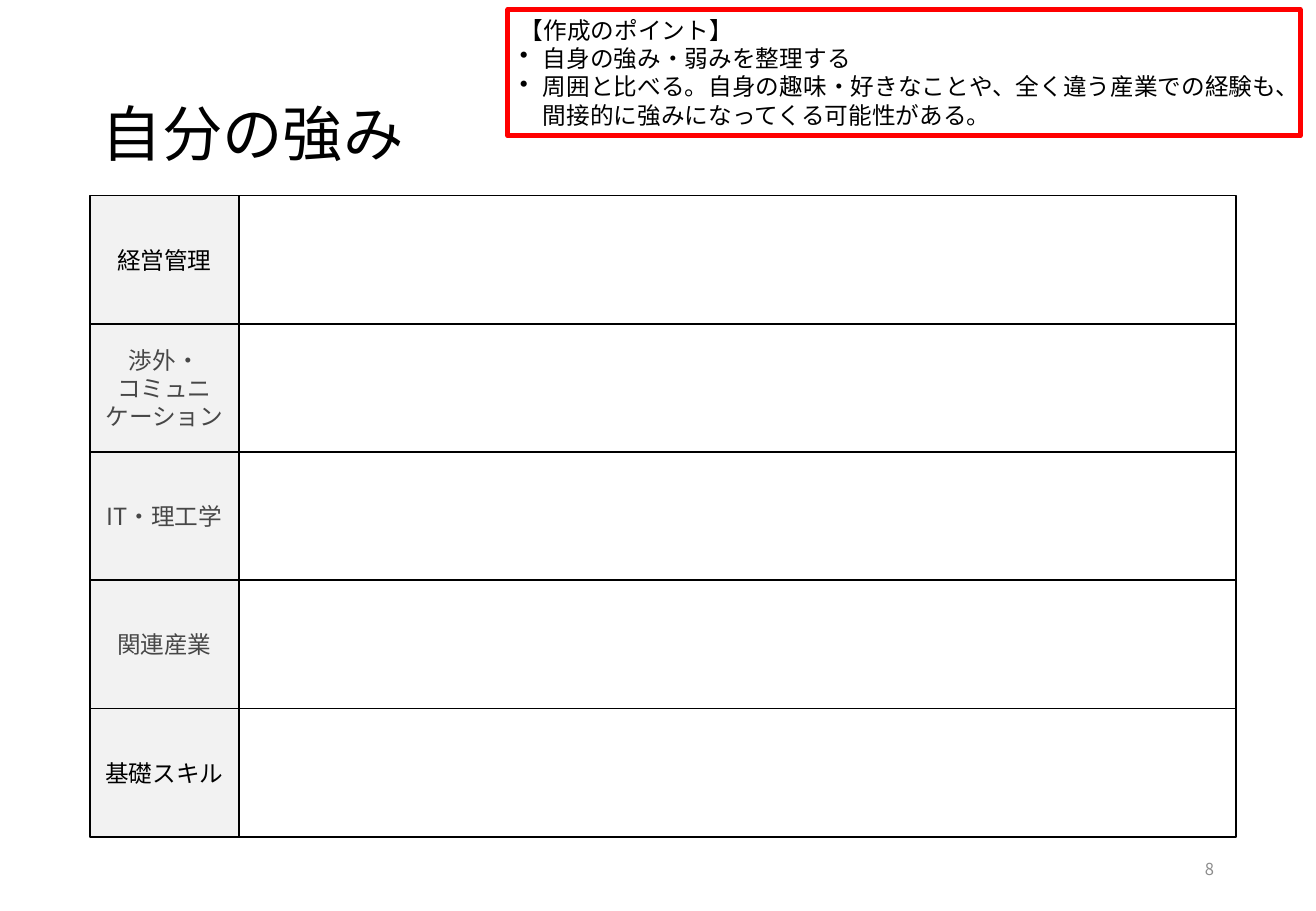
import pptx
import pptx.util
import pptx.dml.color
import pptx.enum.shapes
import pptx.enum.text
import pptx.oxml.ns
from lxml import etree

WIDE, HIGH = 10.83, 7.5
FACE = "Noto Sans CJK JP"
HUES = {"ink": "000000", "soft": "474747", "page": "8C8C8C",
        "head": "F2F2F2", "paper": "FFFFFF", "alert": "FF0000"}
ROWS = [("経営管理", "ink"), ("渉外・\nコミュニケーション", "soft"),
        ("IT・理工学", "soft"), ("関連産業", "soft"), ("基礎スキル", "ink")]
HINT = "【作成のポイント】"
TIPS = ["自身の強み・弱みを整理する",
        "周囲と比べる。自身の趣味・好きなことや、全く違う産業での経験も、"
        "間接的に強みになってくる可能性がある。"]
ALIGN = pptx.enum.text.PP_ALIGN
ANCHOR = pptx.enum.text.MSO_ANCHOR


def hue(name):
    """Return the named colour."""
    return pptx.dml.color.RGBColor.from_string(HUES[name])


def inches(box):
    """Turn a box in inches into lengths."""
    return [pptx.util.Inches(side) for side in box]


def write(para, text, size, tint="ink", align=ALIGN.LEFT):
    """Fill a paragraph with text in the slide's font."""
    para.text = text
    para.alignment = align
    para.font.size = pptx.util.Pt(size)
    para.font.color.rgb = hue(tint)
    para.font.name = FACE
    east = etree.SubElement(para.font._element, pptx.oxml.ns.qn("a:ea"))
    east.set("typeface", FACE)


def bullet(para, depth=0.19):
    """Give a paragraph a hanging bullet."""
    props = para._p.get_or_add_pPr()
    indent = pptx.util.Inches(depth)
    props.set("marL", str(indent))
    props.set("indent", str(-indent))
    mark = etree.Element(pptx.oxml.ns.qn("a:buChar"), char="•")
    props.insert(0, mark)


def label(slide, box, text, size, tint="ink", align=ALIGN.LEFT):
    """Place one line of text, centred in height, in a box."""
    frame = slide.shapes.add_textbox(*inches(box)).text_frame
    frame.word_wrap = True
    frame.vertical_anchor = ANCHOR.MIDDLE
    write(frame.paragraphs[0], text, size, tint, align)
    return frame.paragraphs[0]


def panel(slide, box, fill, edge="ink", width=1):
    """Draw a filled rectangle with an outline."""
    shape = slide.shapes.add_shape(
        pptx.enum.shapes.MSO_SHAPE.RECTANGLE, *inches(box))
    shape.shadow.inherit = False
    shape.fill.solid()
    shape.fill.fore_color.rgb = hue(fill)
    shape.line.color.rgb = hue(edge)
    shape.line.width = pptx.util.Pt(width)
    shape.text_frame.word_wrap = True
    return shape


def skills(slide, box):
    """Stack the skill rows, each a head and an empty field."""
    left, top, width, height = box
    step = height / len(ROWS)
    head = 0.13 * width
    for row, (text, tint) in enumerate(ROWS):
        y = top + row * step
        panel(slide, (left + head, y, width - head, step), "paper")
        cell = panel(slide, (left, y, head, step), "head")
        cell.text_frame.vertical_anchor = ANCHOR.MIDDLE
        write(cell.text_frame.paragraphs[0], text, 14, tint, ALIGN.CENTER)


def advice(slide, box):
    """Draw the framed list of writing tips."""
    frame = panel(slide, box, "paper", "alert", 3).text_frame
    frame.vertical_anchor = ANCHOR.TOP
    write(frame.paragraphs[0], HINT, 14)
    for tip in TIPS:
        para = frame.add_paragraph()
        write(para, tip, 14)
        bullet(para)


def main():
    """Build and save the slide."""
    deck = pptx.Presentation()
    deck.slide_width, deck.slide_height = inches((WIDE, HIGH))
    slide = deck.slides.add_slide(deck.slide_layouts[6])
    title = label(slide, (0.74, 0.72, 9.34, 0.82), "自分の強み", 35.8)
    title.line_spacing = 0.9
    skills(slide, (0.74, 1.61, 9.43, 5.28))
    advice(slide, (4.18, 0.08, 6.52, 1.04))
    label(slide, (7.65, 6.95, 2.44, 0.4), "8", 9.8, "page", ALIGN.RIGHT)
    deck.save("out.pptx")


if __name__ == "__main__":
    main()
